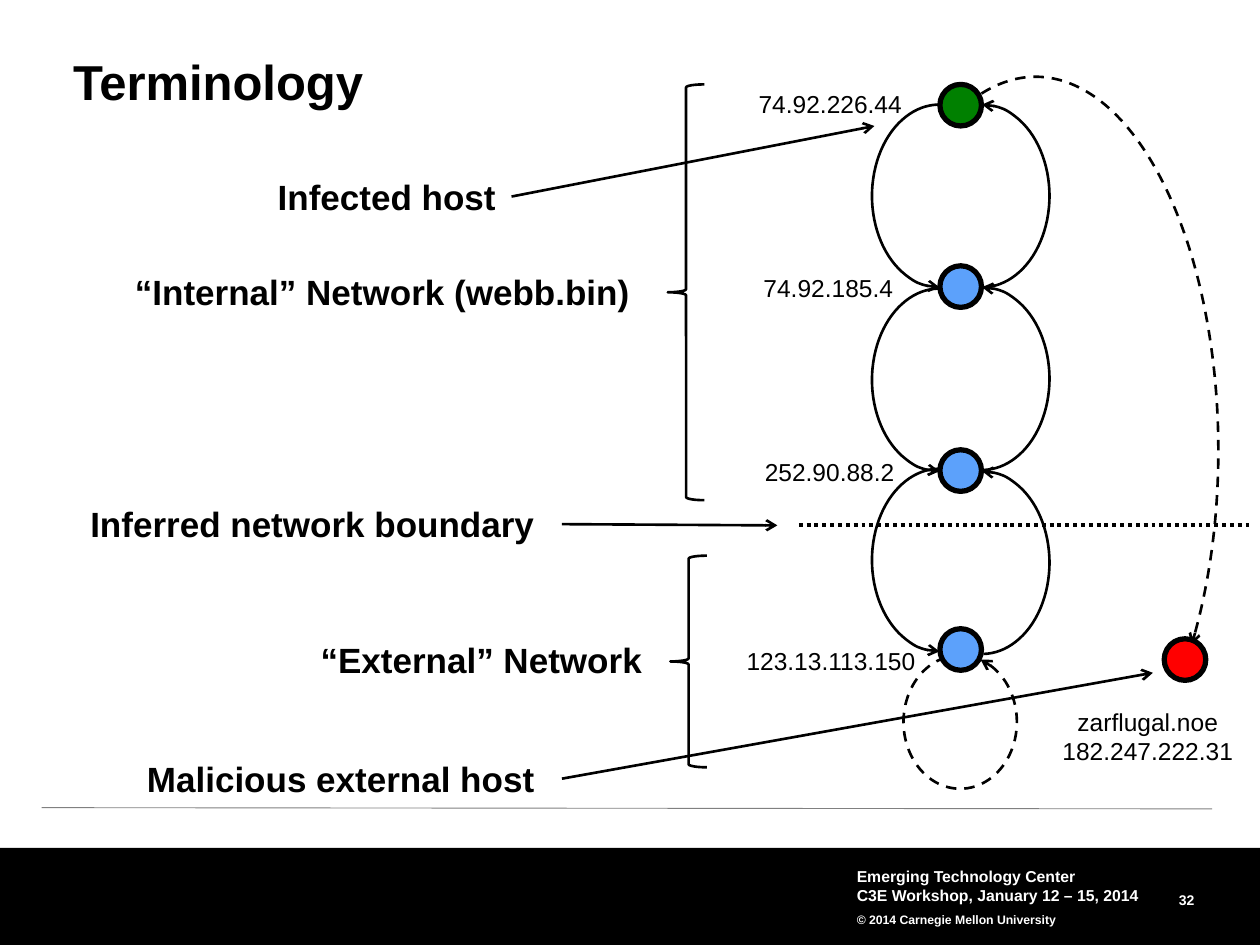
from pptx import Presentation
from pptx.dml.color import RGBColor
from pptx.enum.dml import MSO_LINE as Dash
from pptx.enum.shapes import MSO_CONNECTOR as Conn, MSO_SHAPE as Geo
from pptx.enum.text import MSO_ANCHOR as Anchor, PP_ALIGN as Align
from pptx.oxml.ns import qn
from pptx.util import Inches, Pt
from lxml.etree import SubElement

HUES = {"ink": "000000", "paper": "FFFFFF", "rule": "808080",
        "host": "008000", "peer": "5CA1FB", "evil": "FF0000"}


class Board:
    """Draws styled elements on one slide."""

    def __init__(self, slide, font="Arial"):
        self.slide = slide
        self.font = font

    def hue(self, name):
        return RGBColor.from_string(HUES[name])

    def pen(self, item, width, hue="ink", dash=None, head=None):
        item.line.color.rgb = self.hue(hue)
        item.line.width = Pt(width)
        if dash:
            item.line.dash_style = dash
        if head:
            SubElement(item.line._get_or_add_ln(), qn("a:" + head), type="arrow")

    def shape(self, geo, box, fill=None):
        item = self.slide.shapes.add_shape(geo, *map(Inches, box))
        item.shadow.inherit = False
        if fill:
            item.fill.solid()
            item.fill.fore_color.rgb = self.hue(fill)
        else:
            item.fill.background()
        item.line.fill.background()
        return item

    def node(self, left, top, fill):
        self.pen(self.shape(Geo.OVAL, (left, top, 0.33, 0.33), fill), 3)

    def arc(self, box, span=(162, 53.48), turn=0, head="headEnd", dash=None):
        item = self.shape(Geo.ARC, box)
        item.adjustments[0], item.adjustments[1] = span
        item.rotation = turn
        self.pen(item, 1.5, dash=dash, head=head)

    def brace(self, *box):
        self.pen(self.shape(Geo.LEFT_BRACE, box), 1.5)

    def link(self, start, end, width=1.5, hue="ink", dash=None, head=None, label=None):
        item = self.slide.shapes.add_connector(
            Conn.STRAIGHT, *map(Inches, (*start, *end)))
        SubElement(item._element.spPr, qn("a:effectLst"))
        self.pen(item, width, hue, dash, head)
        item.line._get_or_add_ln()
        if label is not None:
            item.begin_connect(label, 3)

    def text(self, box, lines, size, bold=False, hue="ink", align=Align.CENTER,
             pad=None, wrap=True, anchor=Anchor.TOP, space=None):
        item = self.slide.shapes.add_textbox(*map(Inches, box))
        frame = item.text_frame
        frame.word_wrap = wrap
        frame.vertical_anchor = anchor
        if pad is not None:
            frame.margin_left = frame.margin_right = Inches(pad)
            frame.margin_top = frame.margin_bottom = Inches(pad)
        frame.text = "\n".join(lines)
        for par in frame.paragraphs:
            par.alignment = align
            par.line_spacing = space
            par.font.name = self.font
            par.font.size = Pt(size)
            par.font.bold = bold
            par.font.color.rgb = self.hue(hue)
        return item

    def label(self, left, top, width, words):
        return self.text((left, top, width, 0.44), [words], 20, True)

    def tag(self, left, top, width, *lines, height=0.34):
        self.text((left, top, width, height), lines, 14, wrap=False)


def main():
    deck = Presentation()
    deck.slide_width, deck.slide_height = Inches(10), Inches(7.5)
    board = Board(deck.slides.add_slide(deck.slide_layouts[6]))

    board.link((0.33, 6.41), (9.62, 6.42), 0.5, "rule")
    board.shape(Geo.RECTANGLE, (0, 6.73, 10, 0.77), "ink")
    board.text((8.56, 7.03, 0.92, 0.18), ["32"], 8, True, "paper", Align.RIGHT,
               0, anchor=Anchor.MIDDLE, space=Pt(13))
    foot = board.text(
        (6.75, 6.83, 2.5, 0.58),
        ["Emerging Technology Center", "C3E Workshop, January 12 – 15, 2014",
         "© 2014 Carnegie Mellon University"],
        9, True, "paper", Align.LEFT, 0.05, anchor=Anchor.MIDDLE)
    credit = foot.text_frame.paragraphs[2]
    credit.font.size = Pt(7)
    credit.line_spacing = 1.5
    board.text((0.58, 0.46, 8.92, 0.42), ["Terminology"], 28, True,
               align=Align.LEFT, pad=0, space=0.9)

    for top, fill in ((0.67, "host"), (2.11, "peer"), (3.57, "peer"), (4.99, "peer")):
        board.node(7.46, top, fill)
    for right, left in ((0.83, 0.83), (2.28, 2.29), (3.74, 3.72)):
        board.arc((7.26, right, 1.07, 1.45))
        board.arc((6.92, left, 1.07, 1.45), turn=180)
    board.arc((7.17, 5.2, 0.9, 1.06), (64.93, 44.08), 180, dash=Dash.DASH)
    board.arc((6.77, 0.61, 2.9, 5.93), (156.82, 30.74), head="tailEnd", dash=Dash.DASH)
    board.node(9.24, 5.07, "evil")
    board.link((6.34, 4.17), (9.92, 4.17), 2.25, dash=Dash.ROUND_DOT)

    board.tag(8.33, 5.56, 1.56, "zarflugal.noe", "182.247.222.31", height=0.57)
    board.tag(5.92, 0.66, 1.34, "74.92.226.44")
    board.tag(5.96, 2.12, 1.23, "74.92.185.4")
    board.tag(5.97, 3.58, 1.23, "252.90.88.2")
    board.tag(5.82, 5.08, 1.55, "123.13.113.150")

    board.label(0.83, 2.1, 4.41, "“Internal” Network (webb.bin)")
    board.label(2.4, 5.02, 2.84, "“External” Network")
    board.brace(5.3, 0.67, 0.29, 3.3)
    board.brace(5.32, 4.41, 0.29, 1.68)
    for left, top, width, words, end in (
            (0.95, 5.96, 3.51, "Malicious external host", (9.15, 5.34)),
            (0.5, 3.94, 3.96, "Inferred network boundary", (6.17, 4.17)),
            (2.08, 1.34, 1.98, "Infected host", (6.94, 1))):
        label = board.label(left, top, width, words)
        board.link((left + width, top + 0.22), end, head="tailEnd", label=label)

    deck.save("out.pptx")


if __name__ == "__main__":
    main()
